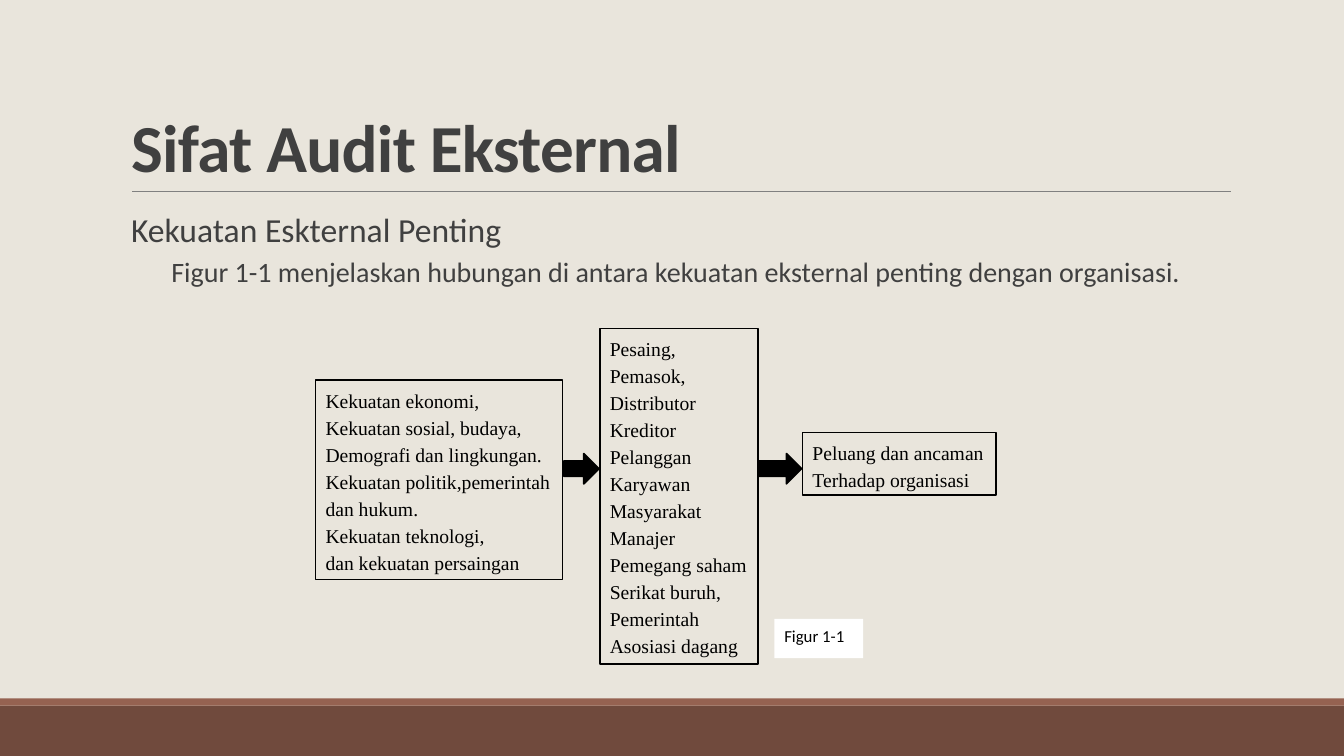
from lxml import etree
from pptx import Presentation
from pptx import util as u
from pptx.dml.color import RGBColor
from pptx.enum import shapes, text
from pptx.oxml.ns import qn

COLORS = {
    "background": "E9E5DC", "footer": "704A3D", "stripe": "956251",
    "rule": "808080", "heading": "404040", "black": "000000", "white": "FFFFFF",
}
TITLE = "Sifat Audit Eksternal"
SUBTITLE = "Kekuatan Eskternal Penting"
EXPLANATION = "Figur 1-1 menjelaskan hubungan di antara kekuatan eksternal penting dengan organisasi."
CAPTION = "Figur 1-1"
STAGES = [
    (3.13, 2.45, 1.98, [
        "Kekuatan ekonomi,", "Kekuatan sosial, budaya,", "Demografi dan lingkungan.",
        "Kekuatan politik,pemerintah", "dan hukum.", "Kekuatan teknologi,",
        "dan kekuatan persaingan"]),
    (5.95, 1.57, 3.33, [
        "Pesaing,", "Pemasok,", "Distributor", "Kreditor", "Pelanggan", "Karyawan",
        "Masyarakat", "Manajer", "Pemegang saham", "Serikat buruh,", "Pemerintah",
        "Asosiasi dagang"]),
    (7.96, 1.92, 0.62, ["Peluang dan ancaman", "Terhadap organisasi"]),
]
STAGE_TOPS = (3.77, 3.26, 4.29)
ARROW_TOP, ARROW_HEIGHT, ARROW_GAP = 4.5, 0.3, 0.01


def color(name):
    return RGBColor.from_string(COLORS[name])


def write(paragraph, content, size, font="Calibri", fill="heading", bold=False,
          line=1.0, before=0, after=0, indent=0, tracking=None):
    paragraph.alignment = text.PP_ALIGN.LEFT
    paragraph.line_spacing = line
    paragraph.space_before = u.Pt(before)
    paragraph.space_after = u.Pt(after)
    if indent:
        paragraph._p.get_or_add_pPr().set("marL", str(u.Inches(indent)))
    run = paragraph.add_run()
    run.text = content
    run.font.size = u.Pt(size)
    run.font.name = font
    run.font.bold = bold
    run.font.color.rgb = color(fill)
    if tracking:
        run._r.get_or_add_rPr().set("spc", str(tracking))


def add_block(slide, kind, left, top, width, height, fill=None, outline=None, weight=1):
    shape = slide.shapes.add_shape(kind, *map(u.Inches, (left, top, width, height)))
    shape.shadow.inherit = False
    if fill:
        shape.fill.solid()
        shape.fill.fore_color.rgb = color(fill)
    else:
        shape.fill.background()
    if outline:
        shape.line.color.rgb = color(outline)
        shape.line.width = u.Pt(weight)
    else:
        shape.line.fill.background()
    shape.text_frame.vertical_anchor = text.MSO_ANCHOR.TOP
    return shape


def add_rule(slide):
    rule = slide.shapes.add_connector(
        shapes.MSO_CONNECTOR.STRAIGHT, *map(u.Inches, (1.31, 1.9, 12.21, 1.9)))
    rule.line.color.rgb = color("rule")
    rule.line.width = u.Pt(0.5)
    etree.SubElement(rule._element.spPr, qn("a:effectLst"))


def add_headings(slide):
    title = slide.shapes.title
    title.left, title.top, title.width, title.height = map(u.Inches, (1.2, 0.31, 11, 1.59))
    title.text_frame.vertical_anchor = text.MSO_ANCHOR.BOTTOM
    title.text_frame.word_wrap = True
    write(title.text_frame.paragraphs[0], TITLE, 48, bold=True, line=0.85, tracking=-50)

    body = slide.shapes.add_textbox(*map(u.Inches, (1.2, 2.02, 11, 4.4))).text_frame
    body.word_wrap = True
    body.margin_left = body.margin_right = 0
    write(body.paragraphs[0], SUBTITLE, 24, after=2, indent=0.1)
    explanation = body.add_paragraph()
    explanation.level = 1
    write(explanation, EXPLANATION, 20, before=2, after=4, indent=0.5)


def add_diagram(slide):
    rectangle = shapes.MSO_SHAPE.RECTANGLE
    for (left, width, height, lines), top in zip(STAGES, STAGE_TOPS):
        frame = add_block(slide, rectangle, left, top, width, height, outline="black").text_frame
        frame.word_wrap = False
        frame.auto_size = text.MSO_AUTO_SIZE.SHAPE_TO_FIT_TEXT
        for number, content in enumerate(lines):
            paragraph = frame.add_paragraph() if number else frame.paragraphs[0]
            write(paragraph, content, 14, font="Times New Roman", fill="black", line=1.15)

    for source, target in zip(STAGES, STAGES[1:]):
        left = source[0] + source[1] + ARROW_GAP
        add_block(slide, shapes.MSO_SHAPE.RIGHT_ARROW, left, ARROW_TOP,
                  target[0] - ARROW_GAP - left, ARROW_HEIGHT,
                  fill="black", outline="black", weight=1.25)

    caption = add_block(slide, rectangle, 7.68, 6.14, 0.88, 0.39, fill="white")
    write(caption.text_frame.paragraphs[0], CAPTION, 12, fill="black", line=1.07, after=8)


def main():
    presentation = Presentation()
    presentation.slide_width = u.Inches(13.33)
    presentation.slide_height = u.Inches(7.5)
    slide = presentation.slides.add_slide(presentation.slide_layouts[5])
    slide.background.fill.solid()
    slide.background.fill.fore_color.rgb = color("background")
    for top, height, fill in ((7, 0.5, "footer"), (6.93, 0.07, "stripe")):
        add_block(slide, shapes.MSO_SHAPE.RECTANGLE, 0, top, 13.33, height, fill=fill)
    add_rule(slide)
    add_headings(slide)
    add_diagram(slide)
    presentation.save("out.pptx")


if __name__ == "__main__":
    main()
